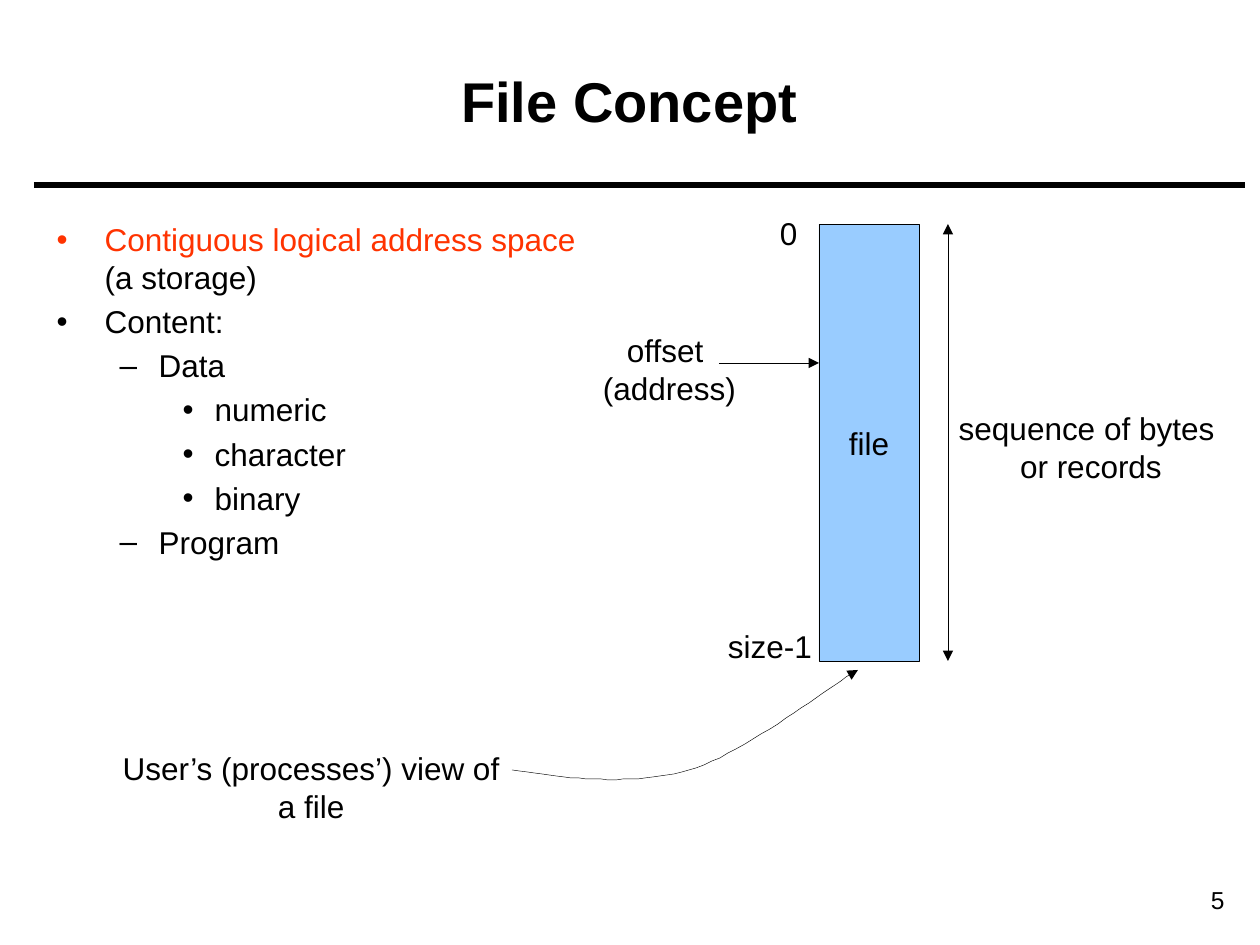
from pptx import Presentation, util as u
from pptx.dml.color import RGBColor
from pptx.enum import shapes, text
from pptx.oxml import ns, xmlchemy as xml

SCALE = 914400 / 126
BLACK, RED, BLUE = "000000", "FF3300", "99CCFF"
# Bullet, left indent and hanging indent of each list level
LEVELS = [("•", 48, 48), ("–", 102, 39), ("•", 158, 32)]
ITEMS = [
    (0, "Contiguous logical address space\v(a storage)"),
    (0, "Content:"),
    (1, "Data"),
    (2, "numeric"),
    (2, "character"),
    (2, "binary"),
    (1, "Program"),
]
# Centred labels: left, top, width, height, text
LABELS = [
    (946, 403, 290, 88, "sequence of bytes \nor records"),
    (767, 208, 43, 50, "0"),
    (716, 621, 108, 50, "size-1"),
    (591, 325, 157, 88, "offset \v(address)"),
    (111, 743, 409, 88, "User’s (processes’) view of \va file "),
]
# Bezier pieces of the arrow that leads to the file
CURVE = [
    [(512, 770), (571, 779), (631, 786), (689, 770)],
    [(689, 770), (747, 753), (833, 683), (858, 670)],
]


def px(n):
    return u.Emu(round(n * SCALE))


def paint(color, value):
    color.rgb = RGBColor.from_string(value)


def place(shape, *box):
    shape.left, shape.top, shape.width, shape.height = map(px, box)


def child(node, tag, **attrs):
    part = xml.OxmlElement(tag)
    for key, value in attrs.items():
        part.set(key, str(value))
    node.append(part)
    return part


def write(frame, words, size=18, align=text.PP_ALIGN.CENTER, bold=False):
    frame.text = words
    frame.auto_size = text.MSO_AUTO_SIZE.NONE
    for para in frame.paragraphs:
        para.alignment = align
        for run in para.runs:
            run.font.name, run.font.size, run.font.bold = "Arial", u.Pt(size), bold
            paint(run.font.color, BLACK)
        for gap in para._p.findall(ns.qn("a:br")):
            child(gap, "a:rPr", sz=size * 100)


def label(slide, box, words, **style):
    shape = slide.shapes.add_textbox(*map(px, box))
    write(shape.text_frame, words, **style)
    shape.text_frame.word_wrap = False


def stroke(shape, width=0.25, ends=()):
    paint(shape.line.color, BLACK)
    shape.line.width = u.Pt(width)
    for end in ends:
        child(shape.line._get_or_add_ln(), "a:" + end, type="triangle")


def line(slide, start, stop, **style):
    link = slide.shapes.add_connector(
        shapes.MSO_CONNECTOR.STRAIGHT, *map(px, start + stop))
    stroke(link, **style)
    child(link._element.spPr, "a:effectLst")


def point(piece, t):
    s = 1 - t
    parts = (s ** 3, 3 * s * s * t, 3 * s * t * t, t ** 3)
    return tuple(sum(w * p[axis] for w, p in zip(parts, piece)) for axis in (0, 1))


def curve(slide, pieces, steps=24):
    dots = [point(piece, n / steps) for piece in pieces for n in range(1, steps + 1)]
    pen = slide.shapes.build_freeform(*pieces[0][0], scale=SCALE)
    pen.add_line_segments(dots, close=False)
    shape = pen.convert_to_shape()
    shape.shadow.inherit = False
    shape.fill.background()
    stroke(shape, ends=["tailEnd"])


def bullets(body, items):
    frame = body.text_frame
    write(frame, "\n".join(words for _, words in items), align=text.PP_ALIGN.LEFT)
    for para, (level, _) in zip(frame.paragraphs, items):
        mark, left, hang = LEVELS[level]
        para.level = level
        para.space_before = u.Pt(3.6)
        props = para._p.get_or_add_pPr()
        props.set("marL", str(px(left)))
        props.set("indent", str(-px(hang)))
        child(props, "a:buFont", typeface="Arial")
        child(props, "a:buChar", char=mark)
    paint(frame.paragraphs[0].runs[0].font.color, RED)


def block(slide, box, words):
    shape = slide.shapes.add_shape(shapes.MSO_SHAPE.RECTANGLE, *map(px, box))
    shape.shadow.inherit = False
    shape.fill.solid()
    paint(shape.fill.fore_color, BLUE)
    stroke(shape)
    write(shape.text_frame, words)
    shape.text_frame.vertical_anchor = text.MSO_ANCHOR.MIDDLE


def main():
    deck = Presentation()
    deck.slide_width, deck.slide_height = px(1260), px(945)
    slide = deck.slides.add_slide(deck.slide_layouts[1])

    # Heading, rule and page number
    title, body = slide.placeholders
    place(title, 44, 21, 1171, 158)
    write(title.text_frame, "File Concept", size=32, bold=True)
    title.text_frame.vertical_anchor = text.MSO_ANCHOR.MIDDLE
    line(slide, (34, 185), (1245, 185), width=3)
    label(slide, (1106, 879, 131, 43), "5", size=14, align=text.PP_ALIGN.RIGHT)

    # List
    place(body, 44, 214, 1171, 645)
    bullets(body, ITEMS)

    # File diagram
    block(slide, (819, 224, 100, 437), "file")
    line(slide, (948, 224), (948, 661), ends=["headEnd", "tailEnd"])
    line(slide, (719, 363), (819, 363), ends=["tailEnd"])
    for *box, words in LABELS:
        label(slide, box, words)
    curve(slide, CURVE)

    deck.save("out.pptx")


if __name__ == "__main__":
    main()
